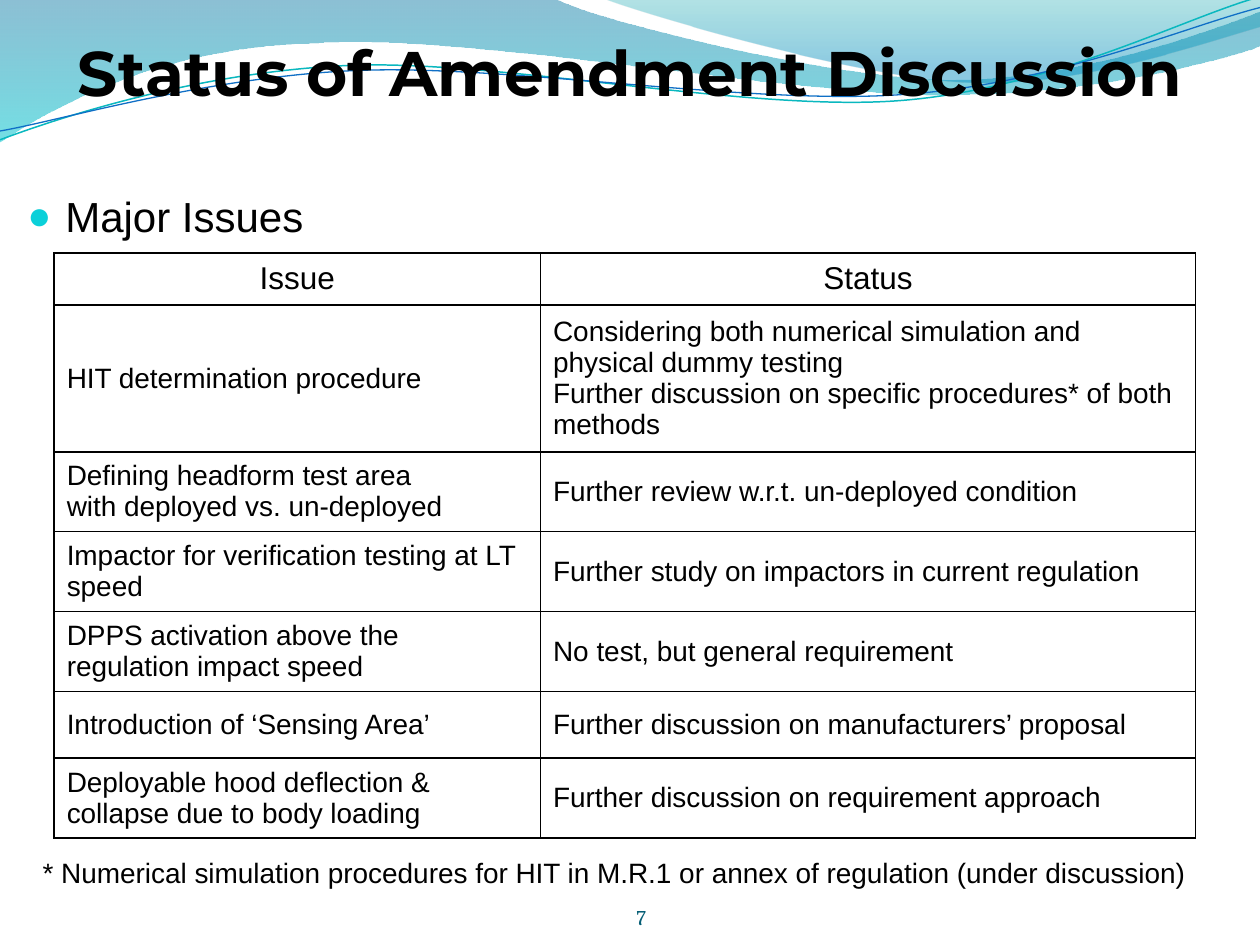
import pptx
import pptx.dml.color
import pptx.enum.text
import pptx.oxml
import pptx.util

Inches, Pt = pptx.util.Inches, pptx.util.Pt
ALIGN, ANCHOR = pptx.enum.text.PP_ALIGN, pptx.enum.text.MSO_ANCHOR
NAMESPACE = 'xmlns:a="http://schemas.openxmlformats.org/drawingml/2006/main"'
BLACK = "000000"

# Content
TITLE = "Status of Amendment Discussion"
HEADING = "Major Issues"
FOOTNOTE = ("* Numerical simulation procedures for HIT in M.R.1 "
            "or annex of regulation (under discussion)")
PAGE_NUMBER = "7"
ISSUES = [
    ("Issue", "Status"),
    ("HIT determination procedure",
     "Considering both numerical simulation and physical dummy testing\n"
     "Further discussion on specific procedures* of both methods"),
    ("Defining headform test area\nwith deployed vs. un-deployed",
     "Further review w.r.t. un-deployed condition"),
    ("Impactor for verification testing at LT speed",
     "Further study on impactors in current regulation"),
    ("DPPS activation above the regulation impact speed",
     "No test, but general requirement"),
    ("Introduction of ‘Sensing Area’",
     "Further discussion on manufacturers’ proposal"),
    ("Deployable hood deflection & collapse due to body loading",
     "Further discussion on requirement approach"),
]
COLUMN_WIDTHS = [3.86, 5.2]
ROW_HEIGHTS = [0.41, 1.09, 0.6, 0.6, 0.6, 0.53, 0.6]

# Wave outlines: a pair is a straight step, six numbers are a Bézier step
# Bands carry gradient stops: position, colour, opacity in percent
BANDS = [
    ([(0, 0), (4.4, -0.01), (4.76, 0.17, 6.64, 0.63, 7.58, 0.63),
      (8.53, 0.63, 9.58, 0.26, 10, 0.09), (10.01, 0.36),
      (9.83, 0.44, 8.7, 0.76, 7.46, 0.75), (6.22, 0.75, 3.82, 0.28, 2.57, 0.34),
      (1.29, 0.36, 0.46, 0.83, -0.01, 1.13)],
     [(0, "0074A1", 45), (100, "00C6CF", 55)]),
    ([(4.79, -0.01), (5.09, 0.11, 6.82, 0.62, 7.69, 0.65),
      (8.56, 0.69, 9.61, 0.32, 10, 0.21), (10, 0)],
     [(0, "00A1A9", 30), (80, "008BBF", 45)]),
]
WAVE_LINES = [
    ([(0, 1.11), (0.48, 0.93, 1.58, 0.57, 2.77, 0.52),
      (3.95, 0.47, 5.93, 0.89, 7.13, 0.8), (8.33, 0.71, 9.38, 0.15, 9.98, -0.02)],
     "0AB8BF", 0.85),
    ([(0, 1.04), (0.47, 0.96, 1.64, 0.61, 2.83, 0.56),
      (4.03, 0.51, 5.97, 0.84, 7.17, 0.75), (8.36, 0.67, 9.41, 0.21, 10, 0.06)],
     "0F6FC6", 0.75),
]


def color(value):
    return pptx.dml.color.RGBColor.from_string(value)


def elements(text):
    return list(pptx.oxml.parse_xml(f"<a:parts {NAMESPACE}>{text}</a:parts>"))


def add_wave(slide, steps, close):
    """Join the step ends, then bend the Bézier steps into true curves."""
    ends = [(Inches(step[-2]), Inches(step[-1])) for step in steps]
    builder = slide.shapes.build_freeform(*ends[0])
    builder.add_line_segments(ends[1:], close=close)
    shape = builder.convert_to_shape()
    shape.shadow.inherit = False
    shape.fill.background()
    segments = list(shape._element.iter("{*}lnTo"))
    for segment, step in zip(segments, steps[1:]):
        if len(step) == 6:
            points = "".join(
                f'<a:pt x="{Inches(x) - shape.left}" y="{Inches(y) - shape.top}"/>'
                for x, y in zip(step[::2], step[1::2]))
            curve, = elements(f"<a:cubicBezTo>{points}</a:cubicBezTo>")
            segment.getparent().replace(segment, curve)
    return shape


def fill_gradient(shape, stops):
    stop_xml = "".join(
        f'<a:gs pos="{position * 1000}"><a:srgbClr val="{value}">'
        f'<a:alpha val="{opacity * 1000}"/></a:srgbClr></a:gs>'
        for position, value, opacity in stops)
    gradient, = elements(f'<a:gradFill rotWithShape="1"><a:gsLst>{stop_xml}</a:gsLst>'
                         '<a:lin ang="5400000" scaled="0"/></a:gradFill>')
    properties = shape._element.spPr
    properties.replace(properties.find("{*}noFill"), gradient)


def set_text(text_frame, text, size, font="Arial", value=BLACK, bold=False,
             align=ALIGN.LEFT):
    text_frame.text = text
    text_frame.word_wrap = True
    for paragraph in text_frame.paragraphs:
        paragraph.alignment = align
        for run in paragraph.runs:
            run.font.size, run.font.name, run.font.bold = Pt(size), font, bold
            run.font.color.rgb = color(value)


def add_text(slide, box, text, size, anchor=ANCHOR.TOP, insets=None, **style):
    text_frame = slide.shapes.add_textbox(*map(Inches, box)).text_frame
    set_text(text_frame, text, size, **style)
    text_frame.vertical_anchor = anchor
    if insets:
        (text_frame.margin_left, text_frame.margin_top,
         text_frame.margin_right, text_frame.margin_bottom) = map(Inches, insets)
    return text_frame.paragraphs[0]._p.get_or_add_pPr()


def add_borders(cell):
    properties = cell._tc.get_or_add_tcPr()
    borders = elements("".join(
        f'<a:{side} w="12700"><a:solidFill><a:srgbClr val="{BLACK}"/>'
        f'</a:solidFill></a:{side}>' for side in ("lnL", "lnR", "lnT", "lnB")))
    for index, border in enumerate(borders):
        properties.insert(index, border)


presentation = pptx.Presentation()
presentation.slide_width, presentation.slide_height = Inches(10), Inches(7.5)
slide = presentation.slides.add_slide(presentation.slide_layouts[6])

# Wave decoration
for steps, stops in BANDS:
    band = add_wave(slide, steps, close=True)
    fill_gradient(band, stops)
    band.line.fill.background()
for steps, value, width in WAVE_LINES:
    wave = add_wave(slide, steps, close=False)
    wave.line.color.rgb = color(value)
    wave.line.width = Pt(width)

# Title, page number and heading
add_text(slide, (0, -0.01, 10, 1.1), TITLE, 36, ANCHOR.MIDDLE, (0, 0.05, 0, 0),
         font="Montserrat", bold=True, align=ALIGN.CENTER)
add_text(slide, (4.77, 6.98, 0.36, 0.4), PAGE_NUMBER, 12, ANCHOR.BOTTOM, (0, 0, 0, 0),
         font="Cambria", value="045D75", align=ALIGN.RIGHT)
heading = add_text(slide, (0.12, 1.46, 9.76, 0.55), HEADING, 24)
heading.set("marL", str(Inches(0.3)))
heading.set("indent", str(Inches(-0.3)))
heading.extend(elements('<a:buClr><a:srgbClr val="0BD0D9"/></a:buClr>'
                        '<a:buSzPct val="95000"/><a:buFont typeface="Arial"/>'
                        '<a:buChar char="●"/>'))

# Issue table
table = slide.shapes.add_table(
    len(ISSUES), len(COLUMN_WIDTHS), Inches(0.43), Inches(2.01),
    Inches(sum(COLUMN_WIDTHS)), Inches(sum(ROW_HEIGHTS))).table
table.horz_banding = False
table.first_row = False
for column, width in zip(table.columns, COLUMN_WIDTHS):
    column.width = Inches(width)
for row_index, (row, height) in enumerate(zip(table.rows, ROW_HEIGHTS)):
    row.height = Inches(height)
    header = row_index == 0
    for cell, text in zip(row.cells, ISSUES[row_index]):
        set_text(cell.text_frame, text, 18 if header else 16,
                 align=ALIGN.CENTER if header else ALIGN.LEFT)
        cell.vertical_anchor = ANCHOR.MIDDLE
        cell.fill.background()
        add_borders(cell)

# Footnote
footnote = add_text(slide, (0.12, 6.74, 9.76, 0.47), FOOTNOTE, 16)
footnote.set("marL", str(Inches(0.12)))

presentation.save("out.pptx")
